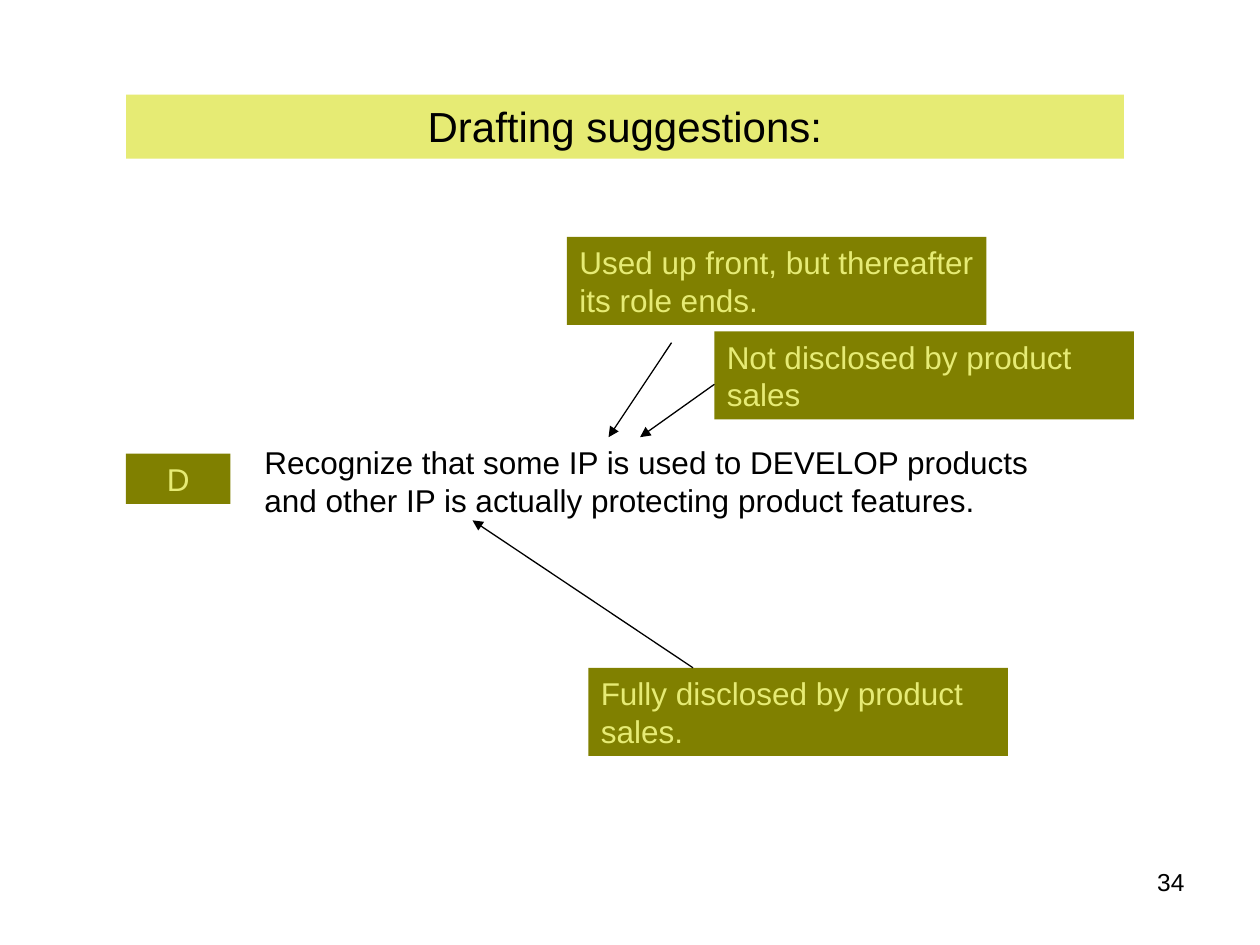
from lxml.etree import SubElement
from pptx import Presentation
from pptx.dml.color import RGBColor
from pptx.enum.shapes import MSO_CONNECTOR
from pptx.enum.text import MSO_ANCHOR, MSO_AUTO_SIZE, PP_ALIGN
from pptx.oxml.ns import qn
from pptx.util import Inches, Pt

COLORS = {"black": "000000", "olive": "808000", "lime": "E6EB74"}
CALLOUT_SIZE = (3.33, 0.7)
CALLOUTS = [
    ("Used up front, but thereafter its role ends.", 4.5, 1.88),
    ("Fully disclosed by product sales.", 4.67, 5.3),
    ("Not disclosed by product sales", 5.67, 2.63),
]
ARROWS = [
    ((5.33, 2.72), (4.83, 3.47)),
    ((5.5, 5.3), (3.75, 4.13)),
    ((5.67, 3.05), (5.08, 3.47)),
]


def color(name):
    return RGBColor.from_string(COLORS[name])


def write_text(box, text, size=18, ink="black", align=PP_ALIGN.LEFT):
    frame = box.text_frame
    frame.text = text
    frame.word_wrap = True
    frame.auto_size = MSO_AUTO_SIZE.NONE
    frame.vertical_anchor = MSO_ANCHOR.TOP
    para = frame.paragraphs[0]
    para.alignment = align
    para.font.name = "Arial"
    para.font.size = Pt(size)
    para.font.color.rgb = color(ink)


def fill_box(box, name):
    box.fill.solid()
    box.fill.fore_color.rgb = color(name)


def add_title(page, text):
    title = page.shapes.title
    title.left, title.top = Inches(1), Inches(0.75)
    title.width, title.height = Inches(7.92), Inches(0.51)
    fill_box(title, "lime")
    write_text(title, text, size=24, align=PP_ALIGN.CENTER)


def add_text(page, text, left, top, width, height, fill=None, **style):
    box = page.shapes.add_textbox(*map(Inches, (left, top, width, height)))
    if fill:
        fill_box(box, fill)
    write_text(box, text, **style)


def add_arrow(page, start, end):
    arrow = page.shapes.add_connector(
        MSO_CONNECTOR.STRAIGHT, *map(Inches, start + end))
    arrow.line.color.rgb = color("black")
    arrow.line.width = Pt(0.75)
    SubElement(arrow.line._get_or_add_ln(), qn("a:tailEnd"), type="triangle")
    SubElement(arrow._element.spPr, qn("a:effectLst"))


def main():
    deck = Presentation()
    deck.slide_width, deck.slide_height = Inches(10), Inches(7.5)
    page = deck.slides.add_slide(deck.slide_layouts[5])

    add_title(page, "Drafting suggestions:")
    add_text(page, "Recognize that some IP is used to DEVELOP products "
             "and other IP is actually protecting product features.",
             2, 3.47, 6.5, 0.7)
    add_text(page, "D", 1, 3.6, 0.83, 0.4, fill="olive", ink="lime",
             align=PP_ALIGN.CENTER)
    for text, left, top in CALLOUTS:
        add_text(page, text, left, top, *CALLOUT_SIZE, fill="olive", ink="lime")
    for start, end in ARROWS:
        add_arrow(page, start, end)
    add_text(page, "34", 7.17, 6.83, 2.33, 0.52, size=14, align=PP_ALIGN.RIGHT)

    deck.save("out.pptx")


if __name__ == "__main__":
    main()
